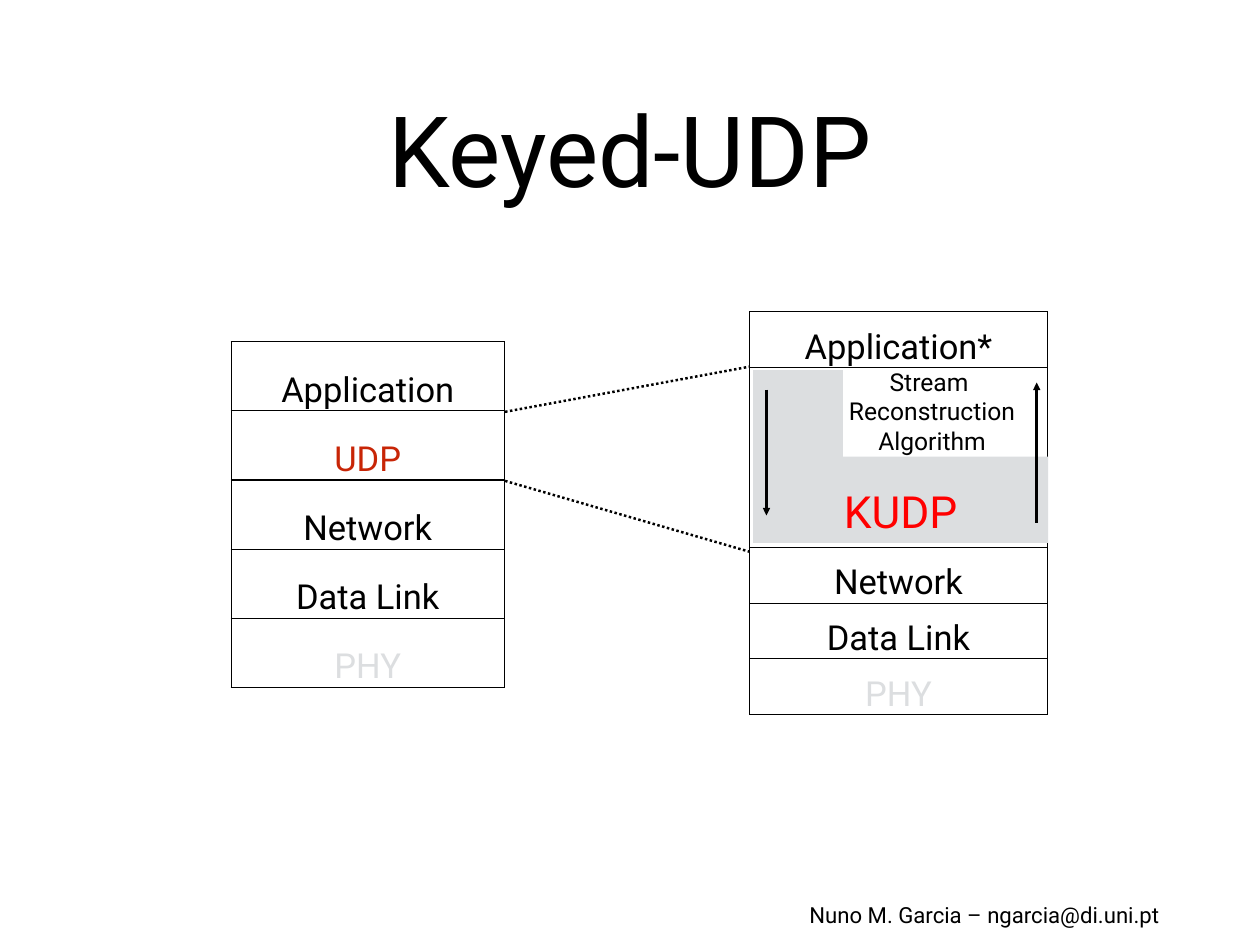
from lxml import etree
from pptx import Presentation
from pptx import util as u
from pptx.dml.color import RGBColor
from pptx.enum import dml, shapes, text
from pptx.oxml.ns import qn

FONT, BLACK, GREY, WHITE = "Roboto", "000000", "DCDEE0", "FFFFFF"
TITLE = "Keyed-UDP"

# Each layer: label, colour, row height, bordered sides
ALL_SIDES = "LRTB"
UDP_LAYERS = [
    ("Application", BLACK, 0.78, ALL_SIDES),
    ("UDP", "C82506", 0.78, ALL_SIDES),
    ("Network", BLACK, 0.78, ALL_SIDES),
    ("Data Link", BLACK, 0.78, ALL_SIDES),
    ("PHY", GREY, 0.78, ALL_SIDES),
]
KUDP_LAYERS = [
    ("Application*", BLACK, 0.63, ALL_SIDES),
    ("", BLACK, 0.72, "LRT"),
    ("", BLACK, 1.31, "LRB"),
    ("Network", BLACK, 0.63, ALL_SIDES),
    ("Data Link", BLACK, 0.63, ALL_SIDES),
    ("PHY", GREY, 0.63, ALL_SIDES),
]
# Each stack: left, top, width, layers
STACKS = [(2.61, 3.86, 3.08, UDP_LAYERS), (8.46, 3.52, 3.36, KUDP_LAYERS)]

# Each label: lines, left, top, width, height, size, colour
LABELS = [
    (["KUDP"], 9.42, 5.41, 1.49, 0.72, 36, "FF0000"),
    (["Stream ", "Reconstruction", "Algorithm"], 9.52, 4.08, 2, 1.12, 20, BLACK),
    (["Nuno M. Garcia – ngarcia@di.uni.pt"], 9.04, 10.12, 4.14, 0.42, 18, BLACK),
]
ZOOM_LINES = [(5.7, 4.65, 8.46, 4.14), (5.7, 5.43, 8.46, 6.23)]
FLOW_ARROWS = [(8.65, 4.4, 8.65, 5.82), (11.7, 5.9, 11.7, 4.32)]


def rgb(value):
    return RGBColor.from_string(value)


def place(shape, left, top, width, height):
    shape.left, shape.top = u.Inches(left), u.Inches(top)
    shape.width, shape.height = u.Inches(width), u.Inches(height)


def write(frame, lines, size, color=BLACK):
    """Fill a text frame with centred paragraphs, one per line."""
    for index, line in enumerate(lines):
        para = frame.paragraphs[0] if index == 0 else frame.add_paragraph()
        para.alignment = text.PP_ALIGN.CENTER
        span = para.add_run()
        span.text = line
        span.font.name, span.font.size = FONT, u.Pt(size)
        span.font.bold = False
        span.font.color.rgb = rgb(color)


def set_frame(frame, wrap):
    frame.word_wrap = wrap
    frame.auto_size = text.MSO_AUTO_SIZE.NONE
    frame.vertical_anchor = text.MSO_ANCHOR.MIDDLE
    frame.margin_left = frame.margin_right = u.Inches(0.06)
    frame.margin_top = frame.margin_bottom = u.Inches(0.06)


def set_borders(cell, sides):
    properties = cell._tc.get_or_add_tcPr()
    for index, side in enumerate(ALL_SIDES):
        line = etree.Element(qn("a:ln" + side), w=str(u.Pt(1)))
        if side in sides:
            fill = etree.SubElement(line, qn("a:solidFill"))
            etree.SubElement(fill, qn("a:srgbClr"), val=BLACK)
        else:
            etree.SubElement(line, qn("a:noFill"))
        properties.insert(index, line)


def add_stack(slide, left, top, width, layers):
    height = sum(layer[2] for layer in layers)
    table = slide.shapes.add_table(
        len(layers), 1, *map(u.Inches, (left, top, width, height))).table
    table.first_row = table.horz_banding = False
    for row, (label, color, row_height, sides) in zip(table.rows, layers):
        row.height = u.Inches(row_height)
        cell = row.cells[0]
        cell.fill.solid()
        cell.fill.fore_color.rgb = rgb(WHITE)
        cell.vertical_anchor = text.MSO_ANCHOR.BOTTOM
        cell.margin_left = cell.margin_right = cell.margin_top = u.Inches(0.01)
        cell.margin_bottom = 0
        if label:
            write(cell.text_frame, [label], 28, color)
        set_borders(cell, sides)


def add_line(slide, ends, dotted=False, arrow=False):
    line = slide.shapes.add_connector(
        shapes.MSO_CONNECTOR.STRAIGHT, *map(u.Inches, ends))
    line.line.color.rgb = rgb(BLACK)
    line.line.width = u.Pt(2)
    if dotted:
        line.line.dash_style = dml.MSO_LINE.ROUND_DOT
    if arrow:
        etree.SubElement(line.line._get_or_add_ln(), qn("a:tailEnd"), type="triangle")
    etree.SubElement(line._element.spPr, qn("a:effectLst"))


def main():
    deck = Presentation()
    deck.slide_width, deck.slide_height = u.Inches(14.22), u.Inches(10.67)
    slide = deck.slides.add_slide(deck.slide_layouts[5])

    title = slide.shapes.title
    place(title, 1.04, 0.49, 12.14, 2.36)
    set_frame(title.text_frame, wrap=True)
    write(title.text_frame, [TITLE], 80)

    for stack in STACKS:
        add_stack(slide, *stack)
    for ends in ZOOM_LINES:
        add_line(slide, ends, dotted=True)

    corner = slide.shapes.add_shape(
        shapes.MSO_SHAPE.CORNER, *map(u.Inches, (8.5, 4.18, 3.33, 1.95)))
    corner.adjustments[0], corner.adjustments[1] = 0.5, 0.52
    corner.fill.solid()
    corner.fill.fore_color.rgb = rgb(GREY)
    corner.line.fill.background()
    corner.shadow.inherit = False

    for lines, left, top, width, height, size, color in LABELS:
        box = slide.shapes.add_textbox(*map(u.Inches, (left, top, width, height)))
        set_frame(box.text_frame, wrap=False)
        write(box.text_frame, lines, size, color)
    for ends in FLOW_ARROWS:
        add_line(slide, ends, arrow=True)

    deck.save("out.pptx")


if __name__ == "__main__":
    main()
